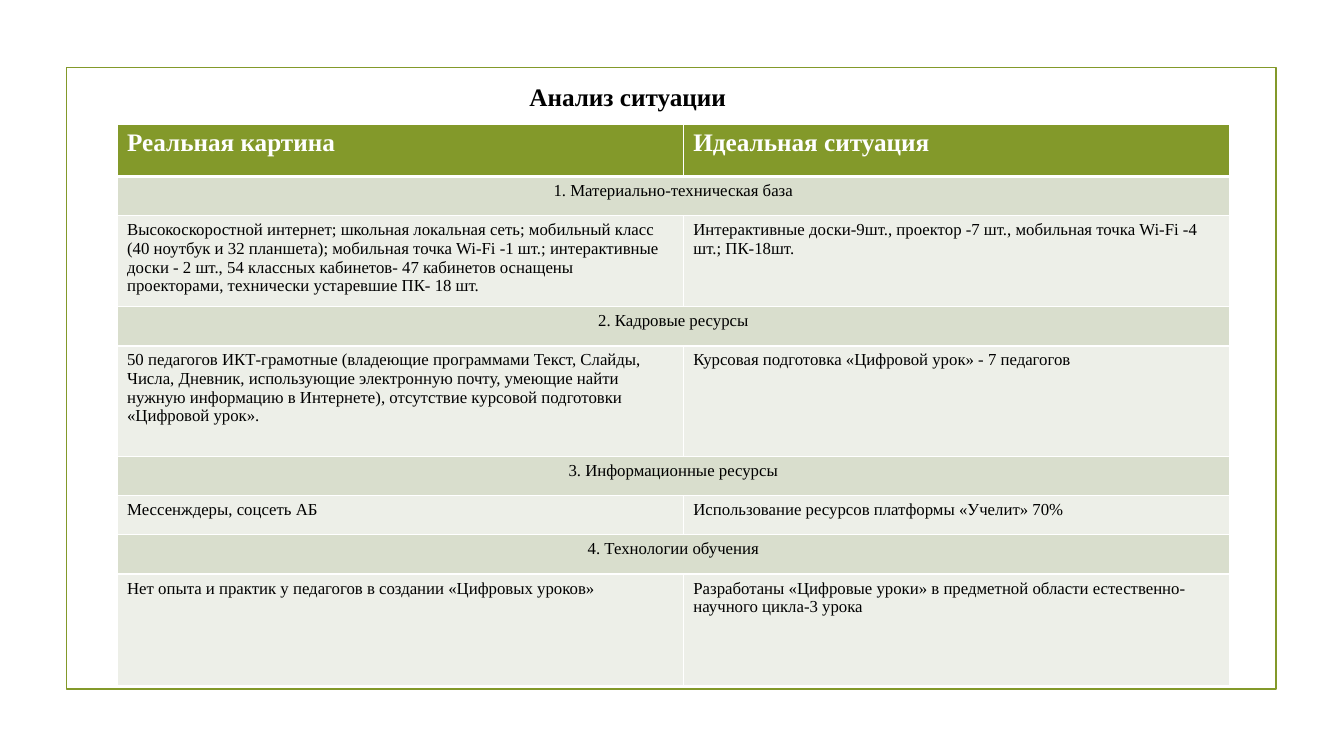
"""Build the slide that compares the real and the ideal situation at school."""
from dataclasses import dataclass

from lxml import etree
from pptx import Presentation
from pptx import util as u
from pptx.dml.color import RGBColor
from pptx.enum import shapes, text
from pptx.oxml import ns

OLIVE = RGBColor(0x83, 0x99, 0x2A)
BAND = RGBColor(0xD9, 0xDE, 0xCD)
PALE = RGBColor(0xED, 0xEF, 0xE8)
WHITE = RGBColor(0xFF, 0xFF, 0xFF)
BLACK = RGBColor(0, 0, 0)
HEAD = {"name": "Times New Roman", "size": u.Pt(18), "bold": True}
BODY = {"name": "Times New Roman", "size": u.Pt(12), "bold": False}
COLS = (14.27, 13.77)
TOPIC = 0.99


@dataclass
class Row:
    """One table row; a single text spans both columns."""
    high: float
    texts: tuple[str, ...]


ROWS = [
    Row(1.32, ("Реальная картина", "Идеальная ситуация")),
    Row(TOPIC, ("1. Материально-техническая база",)),
    Row(2.27, (
        "Высокоскоростной интернет; школьная локальная сеть; мобильный класс "
        "(40 ноутбук и 32 планшета); мобильная точка Wi-Fi -1 шт.; "
        "интерактивные доски - 2 шт., 54 классных кабинетов- 47 кабинетов "
        "оснащены проекторами, технически устаревшие ПК- 18 шт.",
        "Интерактивные доски-9шт., проектор -7 шт., мобильная точка Wi-Fi -4 "
        "шт.; ПК-18шт.")),
    Row(TOPIC, ("2. Кадровые ресурсы",)),
    Row(2.78, (
        "50 педагогов ИКТ-грамотные (владеющие программами Текст, Слайды, "
        "Числа, Дневник, использующие электронную почту, умеющие найти "
        "нужную информацию в Интернете), отсутствие курсовой подготовки "
        "«Цифровой урок».",
        "Курсовая подготовка «Цифровой урок» - 7 педагогов")),
    Row(TOPIC, ("3. Информационные ресурсы",)),
    Row(TOPIC, ("Мессенждеры, соцсеть АБ",
                "Использование ресурсов платформы «Учелит» 70%")),
    Row(TOPIC, ("4. Технологии обучения",)),
    Row(2.8, (
        "Нет опыта и практик у педагогов в создании «Цифровых уроков»",
        "Разработаны «Цифровые уроки» в предметной области "
        "естественно-научного цикла-3 урока")),
]


def write(frame, words: str, form: dict, ink: RGBColor, mid: bool) -> None:
    """Put one formatted paragraph in a text frame."""
    para = frame.paragraphs[0]
    para.alignment = text.PP_ALIGN.CENTER if mid else text.PP_ALIGN.LEFT
    run = para.add_run()
    run.text = words
    for key, val in form.items():
        setattr(run.font, key, val)
    run.font.color.rgb = ink


def edge(cell, top: float, base: float) -> None:
    """Draw white borders around a cell, widths in points."""
    props = cell._tc.get_or_add_tcPr()
    wide = {"lnL": 1, "lnR": 1, "lnT": top, "lnB": base}
    for spot, (tag, size) in enumerate(wide.items()):
        line = etree.Element(ns.qn(f"a:{tag}"), w=str(u.Pt(size)))
        fill = etree.SubElement(line, ns.qn("a:solidFill"))
        etree.SubElement(fill, ns.qn("a:srgbClr"), val=str(WHITE))
        props.insert(spot, line)


def draw_frame(slide) -> None:
    """Draw the outline around the content."""
    box = slide.shapes.add_shape(
        shapes.MSO_SHAPE.RECTANGLE,
        u.Cm(1.68), u.Cm(1.7), u.Cm(30.48), u.Cm(15.67))
    box.shadow.inherit = False
    box.fill.background()
    box.line.color.rgb = OLIVE
    box.line.width = u.Pt(1.25)


def draw_title(slide) -> None:
    """Write the slide heading."""
    box = slide.shapes.add_textbox(
        u.Cm(6.88), u.Cm(1.93), u.Cm(17.88), u.Cm(1.02))
    box.text_frame.word_wrap = True
    write(box.text_frame, "Анализ ситуации", HEAD, BLACK, True)


def draw_table(slide, rows: list[Row]) -> None:
    """Draw the table with its header, topic bands and paired cells."""
    high = sum(row.high for row in rows)
    grid = slide.shapes.add_table(
        len(rows), len(COLS), u.Cm(2.95), u.Cm(3.13),
        u.Cm(sum(COLS)), u.Cm(high)).table
    for col, wide in zip(grid.columns, COLS):
        col.width = u.Cm(wide)
    for i, row in enumerate(rows):
        grid.rows[i].height = u.Cm(row.high)
        first = i == 0
        topic = len(row.texts) == 1
        tint = OLIVE if first else BAND if topic else PALE
        for j in range(len(COLS)):
            cell = grid.cell(i, j)
            cell.fill.solid()
            cell.fill.fore_color.rgb = tint
            edge(cell, 3 if i == 1 else 1, 3 if first else 1)
        if topic:
            grid.cell(i, 0).merge(grid.cell(i, len(COLS) - 1))
        for j, words in enumerate(row.texts):
            write(grid.cell(i, j).text_frame, words,
                  HEAD if first else BODY, WHITE if first else BLACK, topic)


def main() -> None:
    """Build and save the slide."""
    deck = Presentation()
    deck.slide_width, deck.slide_height = u.Cm(33.87), u.Cm(19.05)
    slide = deck.slides.add_slide(deck.slide_layouts[6])
    draw_frame(slide)
    draw_title(slide)
    draw_table(slide, ROWS)
    deck.save("out.pptx")


if __name__ == "__main__":
    main()
